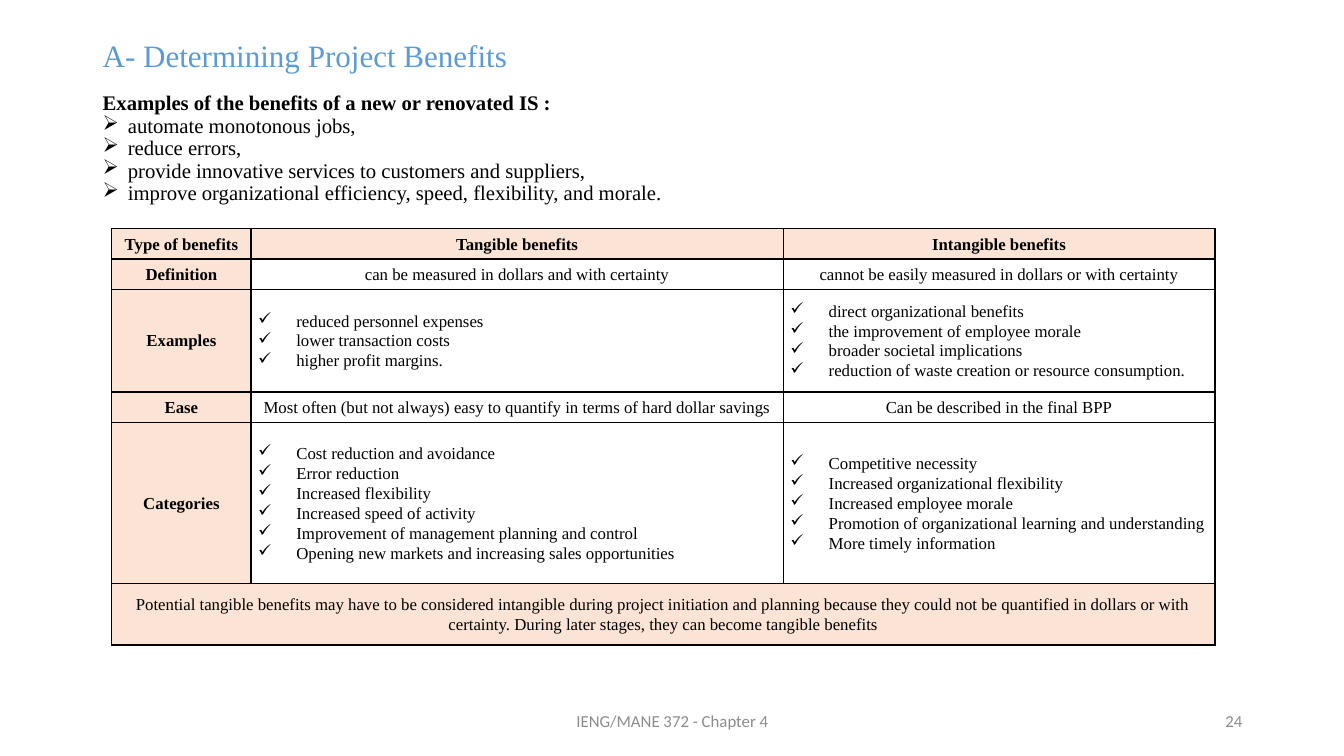
from lxml import etree
from pptx import Presentation
from pptx.dml.color import RGBColor
from pptx.enum.text import MSO_ANCHOR, PP_ALIGN
from pptx.oxml.ns import qn
from pptx.util import Inches, Pt

CENTER, LEFT, RIGHT = PP_ALIGN.CENTER, PP_ALIGN.LEFT, PP_ALIGN.RIGHT
MIDDLE = MSO_ANCHOR.MIDDLE
COLORS = {"title": "5B9BD5", "text": "000000", "footer": "8C8C8C", "label": "FBE4D5"}
SERIF = "Times New Roman"


def add_text(tf, text, size=12, font=SERIF, color="text", bold=False, align=LEFT,
             spacing=1.0, before=0, after=0, bullet=None, indent=0):
    p = tf.paragraphs[0]
    if p.runs:
        p = tf.add_paragraph()
    p.alignment, p.line_spacing = align, spacing
    p.space_before, p.space_after = Pt(before), Pt(after)
    if bullet:
        pPr = p._p.get_or_add_pPr()
        pPr.set("marL", str(Inches(indent)))
        pPr.set("indent", str(-Inches(indent)))
        etree.SubElement(pPr, qn("a:buChar")).set("char", bullet)
    r = p.add_run()
    r.text = text
    r.font.size, r.font.name, r.font.bold = Pt(size), font, bold
    r.font.color.rgb = RGBColor.from_string(COLORS[color])


def add_borders(cell):
    tcPr = cell._tc.get_or_add_tcPr()
    for i, side in enumerate(("a:lnL", "a:lnR", "a:lnT", "a:lnB")):
        ln = etree.Element(qn(side), w=str(Pt(1)))
        fill = etree.SubElement(ln, qn("a:solidFill"))
        etree.SubElement(fill, qn("a:srgbClr")).set("val", COLORS["text"])
        tcPr.insert(i, ln)


prs = Presentation()
prs.slide_width, prs.slide_height = Inches(13.33), Inches(7.5)
s = prs.slides.add_slide(prs.slide_layouts[6])

tf = s.shapes.add_textbox(Inches(0.92), Inches(0.38), Inches(6.2), Inches(1.79)).text_frame
tf.word_wrap = True
add_text(tf, "A- Determining Project Benefits", size=22.2, color="title", spacing=0.8)
add_text(tf, "Examples of the benefits of a new or renovated IS :", size=14.8, bold=True,
         spacing=0.9, before=14.3)
for benefit in ("automate monotonous jobs,", "reduce errors,",
                "provide innovative services to customers and suppliers,",
                "improve organizational efficiency, speed, flexibility, and morale."):
    add_text(tf, benefit, size=14.8, spacing=0.9, bullet="➢", indent=0.25)

for left, width, text, align in ((4.42, 4.5, "IENG/MANE 372 - Chapter 4", CENTER),
                                 (9.42, 3, "24", RIGHT)):
    tf = s.shapes.add_textbox(Inches(left), Inches(6.95), Inches(width), Inches(0.4)).text_frame
    tf.word_wrap, tf.vertical_anchor = True, MIDDLE
    add_text(tf, text, font="Calibri", color="footer", align=align)

rows = [
    ("Type of benefits", "Tangible benefits", "Intangible benefits"),
    ("Definition", "can be measured in dollars and with certainty",
     "cannot be easily measured in dollars or with certainty"),
    ("Examples",
     ["reduced personnel expenses", "lower transaction costs", "higher profit margins."],
     ["direct organizational benefits", "the improvement of employee morale",
      "broader societal implications",
      "reduction of waste creation or resource consumption."]),
    ("Ease", "Most often (but not always) easy to quantify in terms of hard dollar savings",
     "Can be described in the final BPP"),
    ("Categories",
     ["Cost reduction and avoidance", "Error reduction", "Increased flexibility",
      "Increased speed of activity", "Improvement of management planning and control",
      "Opening new markets and increasing sales opportunities"],
     ["Competitive necessity", "Increased organizational flexibility",
      "Increased employee morale",
      "Promotion of organizational learning and understanding",
      "More timely information"]),
    ("Potential tangible benefits may have to be considered intangible during project "
     "initiation and planning because they could not be quantified in dollars or with "
     "certainty. During later stages, they can become tangible benefits",),
]
col_widths = (1.38, 5.28, 4.28)
row_heights = (0.3, 0.3, 1.02, 0.3, 1.6, 0.61)
last = len(rows) - 1

table = s.shapes.add_table(len(rows), len(col_widths), Inches(1.11), Inches(2.27),
                           Inches(sum(col_widths)), Inches(sum(row_heights))).table
table.horz_banding = False
for col, width in zip(table.columns, col_widths):
    col.width = Inches(width)
for row, height in zip(table.rows, row_heights):
    row.height = Inches(height)
table.cell(last, 0).merge(table.cell(last, 2))

for i, row in enumerate(rows):
    for j, content in enumerate(row):
        cell = table.cell(i, j)
        cell.vertical_anchor = MIDDLE
        cell.margin_left = cell.margin_right = Inches(0.07)
        cell.margin_top = cell.margin_bottom = 0
        is_label = i in (0, last) or j == 0
        if is_label:
            cell.fill.solid()
            cell.fill.fore_color.rgb = RGBColor.from_string(COLORS["label"])
        else:
            cell.fill.background()
        if isinstance(content, list):
            for item in content:
                add_text(cell.text_frame, item, spacing=1.07, bullet="✓", indent=0.38)
        else:
            add_text(cell.text_frame, content, bold=is_label and i != last,
                     align=CENTER, spacing=1.07)
    for j in range(len(col_widths)):
        add_borders(table.cell(i, j))

prs.save("out.pptx")
